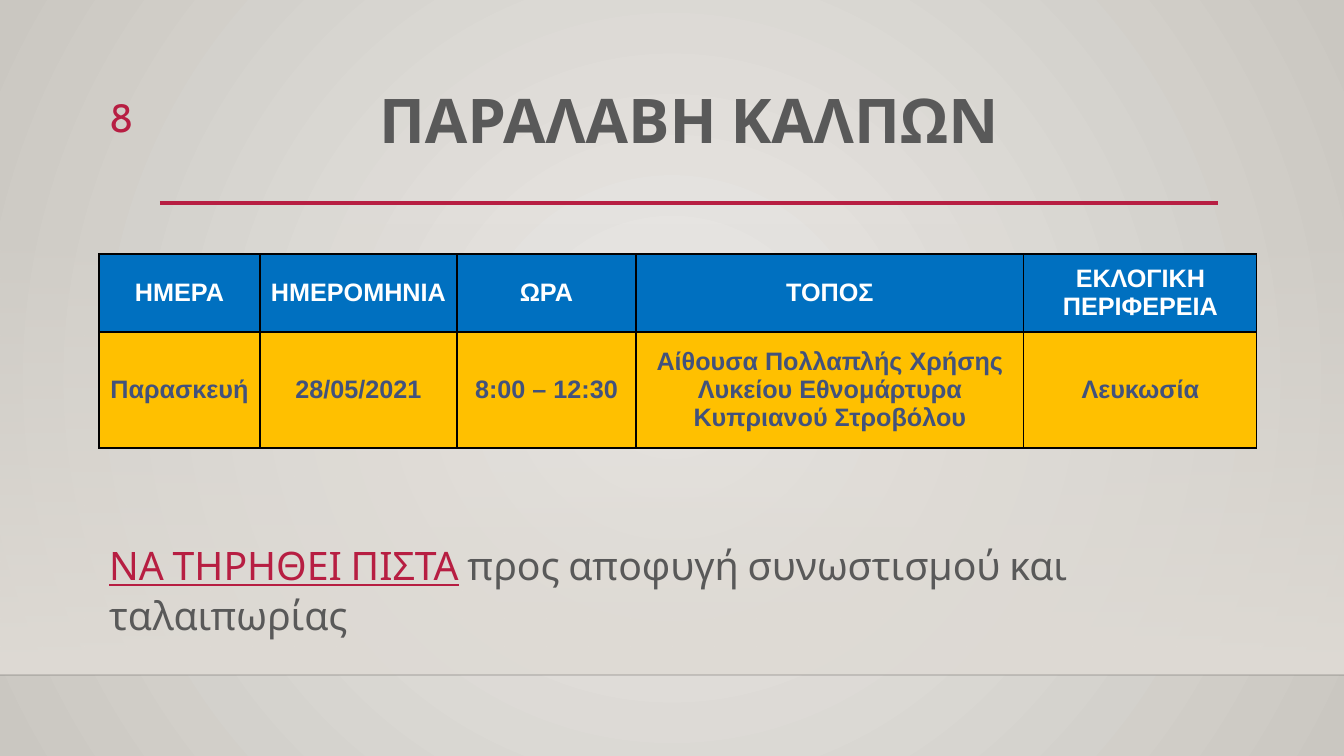
from pptx import Presentation
from pptx.dml.color import RGBColor
from pptx.enum.shapes import MSO_CONNECTOR, MSO_SHAPE
from pptx.enum.text import MSO_ANCHOR, MSO_AUTO_SIZE, PP_ALIGN
from pptx.oxml import parse_xml
from pptx.oxml.ns import nsdecls
from pptx.util import Emu, Pt
from lxml.etree import SubElement

EMU_PER_PX = 914400 / 100.8
DRAWING = "{http://schemas.openxmlformats.org/drawingml/2006/main}"
RED, GREY, SLATE = "B71E42", "595959", "42527C"
BLUE, AMBER, WHITE = "0070C0", "FFC000", "FFFFFF"

HEADINGS = ["ΗΜΕΡΑ", "ΗΜΕΡΟΜΗΝΙΑ", "ΩΡΑ", "ΤΟΠΟΣ", "ΕΚΛΟΓΙΚΗ ΠΕΡΙΦΕΡΕΙΑ"]
PICKUP = ["Παρασκευή", "28/05/2021", "8:00 – 12:30",
          "Αίθουσα Πολλαπλής Χρήσης Λυκείου Εθνομάρτυρα Κυπριανού Στροβόλου",
          "Λευκωσία"]
COLUMN_WIDTHS = [161, 197, 179, 388, 233]
ROW_HEIGHTS = [78, 116]


def px(length):
    return Emu(round(length * EMU_PER_PX))


def place(shape, box):
    shape.left, shape.top, shape.width, shape.height = map(px, box)


def rgb(code):
    return RGBColor.from_string(code)


def set_font(font, size, color, name="Cabin", bold=False):
    font.size, font.name, font.bold = Pt(size), name, bold
    font.color.rgb = rgb(color)


def gradient(start, end, direction, start_alpha=100):
    return parse_xml(
        f'<a:gradFill {nsdecls("a")} rotWithShape="1"><a:gsLst>'
        f'<a:gs pos="0"><a:srgbClr val="{start}">'
        f'<a:alpha val="{start_alpha * 1000}"/></a:srgbClr></a:gs>'
        f'<a:gs pos="100000"><a:srgbClr val="{end}"/></a:gs>'
        f'</a:gsLst>{direction}</a:gradFill>')


def swap_gradient(holder, fill, new_fill):
    """Put a prepared gradient where the fill's default one stands."""
    fill.gradient()
    old_fill = holder.find(f".//{DRAWING}gradFill")
    old_fill.getparent().replace(old_fill, new_fill)


def add_rule(page, left, right, y, color, width, alpha=100):
    rule = page.shapes.add_connector(
        MSO_CONNECTOR.STRAIGHT, px(left), px(y), px(right), px(y))
    rule.line.color.rgb = rgb(color)
    rule.line.width = Pt(width)
    properties = rule.element.spPr
    SubElement(properties, DRAWING + "effectLst")
    tint = properties.find(f".//{DRAWING}srgbClr")
    SubElement(tint, DRAWING + "alpha").set("val", str(alpha * 1000))
    return rule


def add_backdrop(page, box):
    left, top, width, height = box
    # Radial background
    center = ('<a:path path="circle"><a:fillToRect l="50000" t="50000" '
              'r="50000" b="50000"/></a:path>')
    fill = page.background.fill
    swap_gradient(page.element, fill, gradient("ECEAE7", "CAC7C1", center))

    # Wall fading in down to the floor line
    wall = page.shapes.add_shape(MSO_SHAPE.RECTANGLE, 0, 0, 0, 0)
    place(wall, box)
    wall.shadow.inherit = False
    wall.line.fill.background()
    downwards = '<a:lin ang="5400000" scaled="0"/>'
    swap_gradient(wall.element, wall.fill,
                  gradient("DFDBD5", "DFDBD5", downwards, start_alpha=0))
    floor = add_rule(page, left, left + width, top + height, "000001", 1, alpha=20)

    # Both lie behind the placeholders
    for part in (wall, floor):
        page.shapes.title.element.addprevious(part.element)


def add_heading(page, box):
    left, top, width, height = box
    title = page.shapes.title
    place(title, box)
    frame = title.text_frame
    frame.auto_size = MSO_AUTO_SIZE.NONE
    frame.vertical_anchor = MSO_ANCHOR.TOP
    frame.margin_top = px(1)
    para = frame.paragraphs[0]
    para.text = "ΠΑΡΑΛΑΒΗ ΚΑΛΠΩΝ"
    para.alignment = PP_ALIGN.CENTER
    para.line_spacing = 0.9
    set_font(para.font, 44, GREY, bold=True)
    add_rule(page, left, left + width, top + height - 2, RED, 2.5)


def add_page_number(page, box):
    frame = page.shapes.add_textbox(*map(px, box)).text_frame
    frame.word_wrap = True
    para = frame.paragraphs[0]
    para.text = "8"
    para.alignment = PP_ALIGN.RIGHT
    set_font(para.font, 28, RED)


def add_notice(page, box):
    body = page.placeholders[1]
    place(body, box)
    frame = body.text_frame
    frame.auto_size = MSO_AUTO_SIZE.NONE
    frame.vertical_anchor = MSO_ANCHOR.BOTTOM
    frame.margin_bottom = px(42)
    para = frame.paragraphs[0]
    para.line_spacing = 1.05
    para.space_before = Pt(0)
    properties = para._p.get_or_add_pPr()
    properties.set("marL", "0")
    properties.set("indent", "0")
    SubElement(properties, DRAWING + "buNone")
    set_font(para.font, 28, GREY)
    warning = para.add_run()
    warning.text = "ΝΑ ΤΗΡΗΘΕΙ ΠΙΣΤΑ"
    warning.font.underline = True
    warning.font.color.rgb = rgb(RED)
    para.add_run().text = " προς αποφυγή συνωστισμού και ταλαιπωρίας"


def border_cell(cell):
    properties = cell._tc.get_or_add_tcPr()
    for index, side in enumerate(("lnL", "lnR", "lnT", "lnB")):
        properties.insert(index, parse_xml(
            f'<a:{side} {nsdecls("a")} w="12700"><a:solidFill>'
            f'<a:srgbClr val="000000"/></a:solidFill></a:{side}>'))


def fill_cell(cell, text, fill, color):
    cell.fill.solid()
    cell.fill.fore_color.rgb = rgb(fill)
    border_cell(cell)
    cell.vertical_anchor = MSO_ANCHOR.MIDDLE
    cell.margin_left = cell.margin_right = px(7)
    cell.margin_top = cell.margin_bottom = 0
    para = cell.text_frame.paragraphs[0]
    para.text = text
    para.alignment = PP_ALIGN.CENTER
    set_font(para.font, 18, color, name="Arial", bold=True)


def add_schedule(page, left, top):
    table = page.shapes.add_table(
        len(ROW_HEIGHTS), len(COLUMN_WIDTHS), px(left), px(top),
        px(sum(COLUMN_WIDTHS)), px(sum(ROW_HEIGHTS))).table
    table.first_row = table.horz_banding = False
    for column, width in zip(table.columns, COLUMN_WIDTHS):
        column.width = px(width)
    styles = [(HEADINGS, BLUE, WHITE), (PICKUP, AMBER, SLATE)]
    for row, height, (texts, fill, color) in zip(table.rows, ROW_HEIGHTS, styles):
        row.height = px(height)
        for cell, text in zip(row.cells, texts):
            fill_cell(cell, text, fill, color)


def main():
    deck = Presentation()
    deck.slide_width, deck.slide_height = px(1344), px(756)
    page = deck.slides.add_slide(deck.slide_layouts[1])
    add_backdrop(page, (0, 223, 1344, 452))
    add_notice(page, (99, 205, 1120, 475))
    add_schedule(page, 99, 254)
    add_heading(page, (160, 89, 1058, 116))
    add_page_number(page, (53, 88, 90, 55))
    deck.save("out.pptx")


if __name__ == "__main__":
    main()
